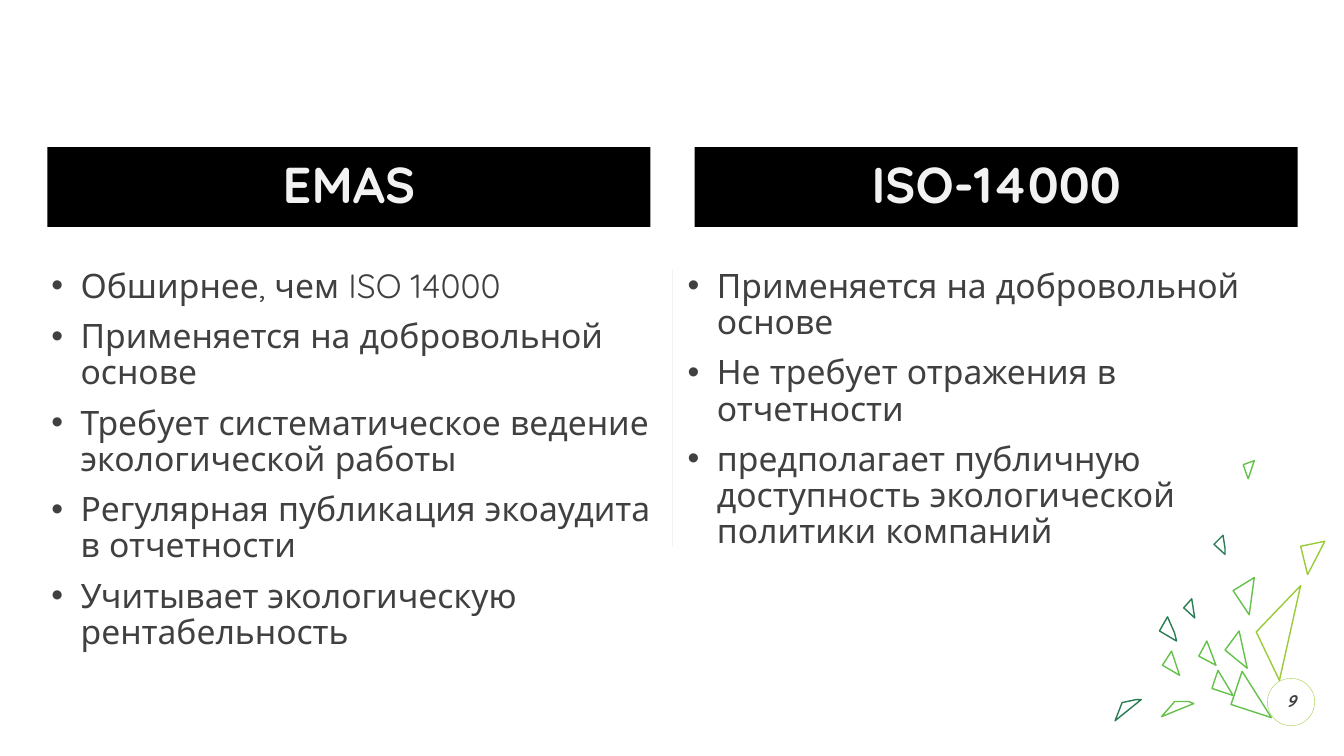
from lxml import etree
from pptx import Presentation
from pptx.dml.color import RGBColor
from pptx.enum.shapes import MSO_CONNECTOR, MSO_SHAPE
from pptx.enum.text import MSO_ANCHOR, PP_ALIGN
from pptx.oxml.ns import qn
from pptx.util import Inches, Pt

RECT, OVAL = MSO_SHAPE.RECTANGLE, MSO_SHAPE.OVAL
LINE = MSO_CONNECTOR.STRAIGHT
MIDDLE, TOP = MSO_ANCHOR.MIDDLE, MSO_ANCHOR.TOP
CENTER, LEFT = PP_ALIGN.CENTER, PP_ALIGN.LEFT

BLACK = RGBColor(0x00, 0x00, 0x00)
PALE = RGBColor(0xF2, 0xF2, 0xF2)
GRAY = RGBColor(0x40, 0x40, 0x40)
GREEN = RGBColor(0x64, 0xC2, 0x4A)
PINE = RGBColor(0x29, 0x7D, 0x53)
LIME = RGBColor(0x9A, 0xCB, 0x39)
FONT = "Quicksand"

# heading, left of bar, left and width of list, points
COLUMNS = [
    ("EMAS", 0.47, 0.51, 6.16, [
        "Обширнее, чем ISO 14000",
        "Применяется на добровольной основе",
        "Требует систематическое ведение экологической работы",
        "Регулярная публикация экоаудита в отчетности",
        "Учитывает экологическую рентабельность",
    ]),
    ("ISO-14000", 6.89, 6.82, 5.98, [
        "Применяется на добровольной основе",
        "Не требует отражения в отчетности",
        "предполагает публичную доступность экологической политики компаний",
    ]),
]
NUMBER = "9"

SHARDS = [
    (GREEN, [(12.21, 6.99), (12.32, 6.66), (12.61, 7.12)]),
    (GREEN, [(12.15, 6.45), (12.29, 6.26), (12.37, 6.63)]),
    (GREEN, [(12.02, 6.83), (12.08, 6.65), (12.23, 6.9)]),
    (GREEN, [(11.89, 6.51), (11.97, 6.36), (12.06, 6.6)]),
    (GREEN, [(11.52, 7.11), (11.65, 6.96), (11.79, 6.96), (11.84, 6.98)]),
    (PINE, [(11.74, 6.03), (11.82, 5.94), (11.84, 6.07), (11.85, 6.13)]),
    (PINE, [(11.06, 7.15), (11.13, 6.97), (11.27, 6.94), (11.32, 6.94)]),
    (GREEN, [(11.53, 6.6), (11.62, 6.46), (11.7, 6.7)]),
    (PINE, [(11.5, 6.26), (11.58, 6.12), (11.65, 6.28), (11.67, 6.36)]),
    (LIME, [(12.46, 6.27), (12.9, 5.81), (12.69, 6.75)]),
    (GREEN, [(12.23, 5.86), (12.44, 5.73), (12.39, 6.1)]),
    (PINE, [(12.04, 5.4), (12.13, 5.31), (12.15, 5.44), (12.15, 5.5)]),
    (LIME, [(12.9, 5.42), (13.14, 5.37), (12.97, 5.7)]),
    (GREEN, [(12.33, 4.61), (12.44, 4.57), (12.4, 4.69), (12.38, 4.75)]),
]

BAR_TOP, BAR_WIDE, BAR_HIGH = 1.46, 5.98, 0.79
LIST_TOP, LIST_HIGH, INDENT = 2.67, 3.42, 0.29
RULE_END = 5.43
BADGE = (12.57, 6.73, 0.47, 0.47)

deck = Presentation()
deck.slide_width, deck.slide_height = Inches(13.33), Inches(7.5)
slide = deck.slides.add_slide(deck.slide_layouts[6])
shapes = slide.shapes


def inches(values):
    return [Inches(v) for v in values]


def outline(shape, color, width):
    shape.shadow.inherit = False
    shape.fill.background()
    shape.line.color.rgb = color
    shape.line.width = Pt(width)


def add_bullet(para):
    props = para._p.get_or_add_pPr()
    props.set("marL", str(Inches(INDENT)))
    props.set("indent", str(-Inches(INDENT)))
    font = etree.SubElement(props, qn("a:buFont"))
    font.set("typeface", "Arial")
    etree.SubElement(props, qn("a:buChar")).set("char", "•")


def write(shape, lines, size, color, align=CENTER, anchor=MIDDLE,
          bold=False, italic=False, bullets=False):
    frame = shape.text_frame
    frame.word_wrap = True
    frame.vertical_anchor = anchor
    frame.margin_left = frame.margin_right = 0
    frame.margin_top = frame.margin_bottom = 0
    for i, line in enumerate(lines):
        para = frame.add_paragraph() if i else frame.paragraphs[0]
        if bullets:
            add_bullet(para)
        para.alignment = align
        para.line_spacing = 0.9
        para.space_before = Pt(10 if i else 0)
        run = para.add_run()
        run.text = line
        font = run.font
        font.name, font.size = FONT, Pt(size)
        font.bold, font.italic = bold, italic
        font.color.rgb = color


for color, points in SHARDS:
    start, *rest = [inches(point) for point in points]
    path = shapes.build_freeform(*start)
    path.add_line_segments(rest, close=True)
    outline(path.convert_to_shape(), color, 1)

for head, bar_left, list_left, list_wide, points in COLUMNS:
    bar = shapes.add_shape(
        RECT, *inches((bar_left, BAR_TOP, BAR_WIDE, BAR_HIGH)))
    bar.shadow.inherit = False
    bar.fill.solid()
    bar.fill.fore_color.rgb = BLACK
    bar.line.fill.background()
    write(bar, [head], 36, PALE, bold=True)
    box = shapes.add_textbox(
        *inches((list_left, LIST_TOP, list_wide, LIST_HIGH)))
    write(box, points, 24, GRAY, LEFT, TOP, bullets=True)

middle = deck.slide_width // 2
rule = shapes.add_connector(
    LINE, middle, Inches(LIST_TOP), middle, Inches(RULE_END))
rule.line.color.rgb = PALE
rule.line.width = Pt(0.5)
etree.SubElement(rule._element.spPr, qn("a:effectLst"))

badge = shapes.add_shape(OVAL, *inches(BADGE))
outline(badge, LIME, 0.25)
write(badge, [NUMBER], 12, GRAY, bold=True, italic=True)

deck.save("out.pptx")
